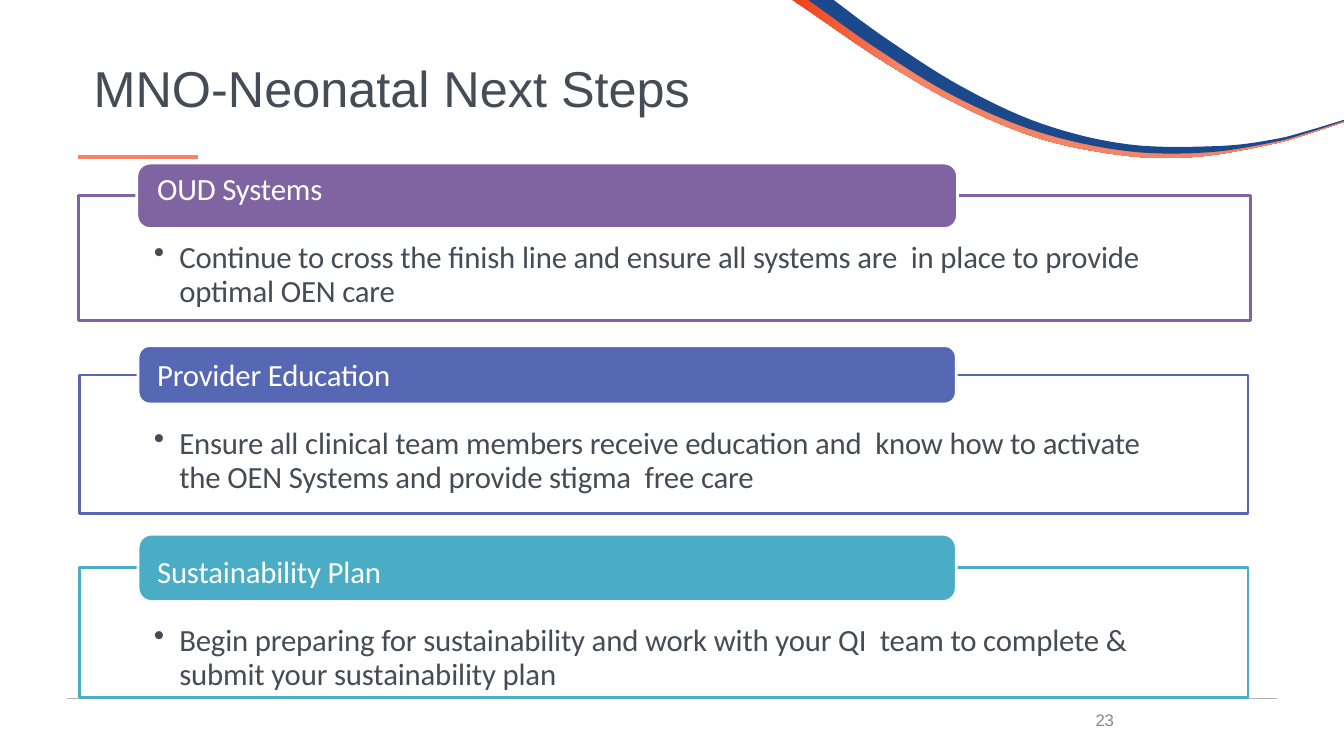
import pptx
import pptx.util
import pptx.dml.color
import pptx.enum.shapes
import pptx.enum.text
import lxml.etree

Cm = pptx.util.Cm
Pt = pptx.util.Pt
RGBColor = pptx.dml.color.RGBColor

WHITE = RGBColor(0xFF, 0xFF, 0xFF)
INK = RGBColor(0x44, 0x4C, 0x55)
GREY = RGBColor(0x88, 0x88, 0x88)
RULE = RGBColor(0xAF, 0xB3, 0xB9)
ORANGE = RGBColor(0xF0, 0x41, 0x15)
CORAL = RGBColor(0xF5, 0x83, 0x66)
NAVY = RGBColor(0x1C, 0x49, 0x8B)
PURPLE = RGBColor(0x80, 0x63, 0xA1)
INDIGO = RGBColor(0x56, 0x67, 0xB4)
TEAL = RGBColor(0x4A, 0xAC, 0xC5)

ORANGE_TOP = [(20.45, 0), (22.4, 1.37), (24.33, 2.51), (26.39, 3.38), (28.58, 3.81),
              (30.51, 3.84), (32.05, 3.57), (32.94, 3.35), (33.87, 3.05)]
ORANGE_BOTTOM = [(19.96, 0), (20.42, 0.3), (22.3, 1.57), (24.26, 2.69), (26.34, 3.53),
                 (28.55, 3.94), (30.25, 3.94), (32.05, 3.63), (32.94, 3.38), (33.87, 3.07)]
NAVY_TOP = [(21.01, 0), (22.33, 0.97), (24.23, 2.18), (26.26, 3.12), (28.45, 3.64),
            (30.71, 3.68), (32.11, 3.51), (32.94, 3.3), (33.87, 3.02)]
NAVY_BOTTOM = [(20.37, 0), (22.12, 1.24), (24.08, 2.44), (26.19, 3.33), (28.42, 3.81),
               (30.43, 3.84), (32.11, 3.58), (32.94, 3.35), (33.87, 3.05)]

PANELS = [
    (PURPLE, (1.98, 4.93, 29.54, 3.15), (3.45, 4.11, 20.68, 1.65), (4.24, 26.62), "OUD Systems",
     "Continue to cross the finish line and ensure all systems are  in place to provide "
     "optimal OEN care"),
    (INDIGO, (2.01, 9.45, 29.44, 3.5), (3.48, 8.71, 20.62, 1.47), (8.94, 25.81),
     "Provider Education",
     "Ensure all clinical team members receive education and  know how to activate "
     "the OEN Systems and provide stigma  free care"),
    (TEAL, (2.01, 14.3, 29.44, 3.28), (3.48, 13.46, 20.62, 1.7), (13.89, 25.81),
     "Sustainability Plan",
     "Begin preparing for sustainability and work with your QI  team to complete & "
     "submit your sustainability plan"),
]


def smooth(points, steps=8):
    """Return a dense curve that passes through the points."""
    ends = [points[0], *points, points[-1]]
    curve = []
    for a, b, c, d in zip(ends, ends[1:], ends[2:], ends[3:]):
        for i in range(steps):
            t = i / steps
            curve.append(tuple(
                (2 * q + (s - p) * t + (2 * p - 5 * q + 4 * s - u) * t ** 2
                 + (3 * q - p - 3 * s + u) * t ** 3) / 2
                for p, q, s, u in zip(a, b, c, d)))
    return curve + [points[-1]]


class Deck:
    """Holds the text style and the current slide."""

    def __init__(self, prs):
        """Add a title-only slide."""
        self.body_font, self.title_font = "Calibri", "Arial"
        self.s = prs.slides.add_slide(prs.slide_layouts[5])

    def frame(self, sp):
        """Clear the margins of a text frame and return it."""
        tf = sp.text_frame
        tf.word_wrap = True
        tf.auto_size = pptx.enum.text.MSO_AUTO_SIZE.NONE
        tf.margin_left = tf.margin_right = tf.margin_bottom = 0
        tf.margin_top = Cm(0.03)
        return tf

    def run(self, p, text, size, color, font, spacing=0):
        """Add a formatted run to a paragraph."""
        r = p.add_run()
        r.text = text
        r.font.size, r.font.name = Pt(size), font
        r.font.color.rgb = color
        if spacing:
            r.font._element.set("spc", str(spacing))

    def title(self, text, box):
        """Place and fill the title placeholder."""
        sp = self.s.shapes.title
        sp.left, sp.top, sp.width, sp.height = map(Cm, box)
        tf = self.frame(sp)
        tf.vertical_anchor = pptx.enum.text.MSO_ANCHOR.MIDDLE
        p = tf.paragraphs[0]
        p.alignment = pptx.enum.text.PP_ALIGN.LEFT
        self.run(p, text, 36, INK, self.title_font)

    def wave(self, top, bottom):
        """Draw a closed ribbon between two curves."""
        outline = [(Cm(x), Cm(y)) for x, y in smooth(top) + smooth(bottom)[::-1]]
        fb = self.s.shapes.build_freeform(*outline[0])
        fb.add_line_segments(outline[1:], close=True)
        sp = fb.convert_to_shape()
        sp.shadow.inherit = False
        sp.line.fill.background()
        return sp

    def line(self, x1, x2, y, color, width):
        """Draw a horizontal line."""
        c = self.s.shapes.add_connector(
            pptx.enum.shapes.MSO_CONNECTOR.STRAIGHT, Cm(x1), Cm(y), Cm(x2), Cm(y))
        c.line.color.rgb, c.line.width = color, Pt(width)
        lxml.etree.SubElement(c._element.spPr, pptx.oxml.ns.qn("a:effectLst"))

    def shape(self, kind, box, line, fill=None):
        """Draw a preset shape with an outline."""
        sp = self.s.shapes.add_shape(kind, *map(Cm, box))
        sp.shadow.inherit = False
        sp.line.color.rgb, sp.line.width = line, Pt(1.98)
        if fill is None:
            sp.fill.background()
        else:
            sp.fill.solid()
            sp.fill.fore_color.rgb = fill
        return sp

    def text(self, box):
        """Add an empty text box and return its frame."""
        return self.frame(self.s.shapes.add_textbox(*map(Cm, box)))

    def panel(self, color, box, tab, text_place, heading, detail):
        """Draw an outlined panel with a tab, a heading and one bullet."""
        kinds = pptx.enum.shapes.MSO_SHAPE
        self.shape(kinds.RECTANGLE, box, color)
        sp = self.shape(kinds.ROUNDED_RECTANGLE, tab, WHITE, color)
        sp.adjustments[0] = 0.2
        top, width = text_place
        tf = self.text((3.86, top, width, 3.55))
        p = tf.paragraphs[0]
        pPr = p._p.get_or_add_pPr()
        pPr.set("marL", str(Cm(0.1)))
        self.run(p, heading, 22, WHITE, self.body_font, -10)
        p = tf.add_paragraph()
        p.space_before, p.line_spacing = Pt(24.4), Pt(24.2)
        pPr = p._p.get_or_add_pPr()
        pPr.set("marL", str(Cm(0.66)))
        pPr.set("indent", str(Cm(-0.64)))
        lxml.etree.SubElement(pPr, pptx.oxml.ns.qn("a:buChar"), char="•")
        self.run(p, detail, 22, INK, self.body_font, -10)

    def number(self, text, box):
        """Add the page number."""
        p = self.text(box).paragraphs[0]
        self.run(p, text, 12, GREY, self.title_font, -10)


def main():
    """Build the slide and save it."""
    prs = pptx.Presentation()
    prs.slide_width, prs.slide_height = Cm(33.87), Cm(19.05)
    deck = Deck(prs)
    fill = deck.wave(ORANGE_TOP, ORANGE_BOTTOM).fill
    fill.gradient()
    fill.gradient_angle = 0
    for stop, color, position in zip(fill.gradient_stops, (ORANGE, CORAL), (0, 0.2)):
        stop.color.rgb, stop.position = color, position
    fill = deck.wave(NAVY_TOP, NAVY_BOTTOM).fill
    fill.solid()
    fill.fore_color.rgb = NAVY
    deck.line(1.7, 32.18, 17.6, RULE, 0.5)
    deck.line(1.96, 5, 3.96, CORAL, 2.5)
    deck.title("MNO-Neonatal Next Steps", (2.36, 1.4, 15.37, 1.57))
    for panel in PANELS:
        deck.panel(*panel)
    deck.number("23", (27.61, 17.86, 0.6, 0.56))
    prs.save("out.pptx")


if __name__ == "__main__":
    main()
